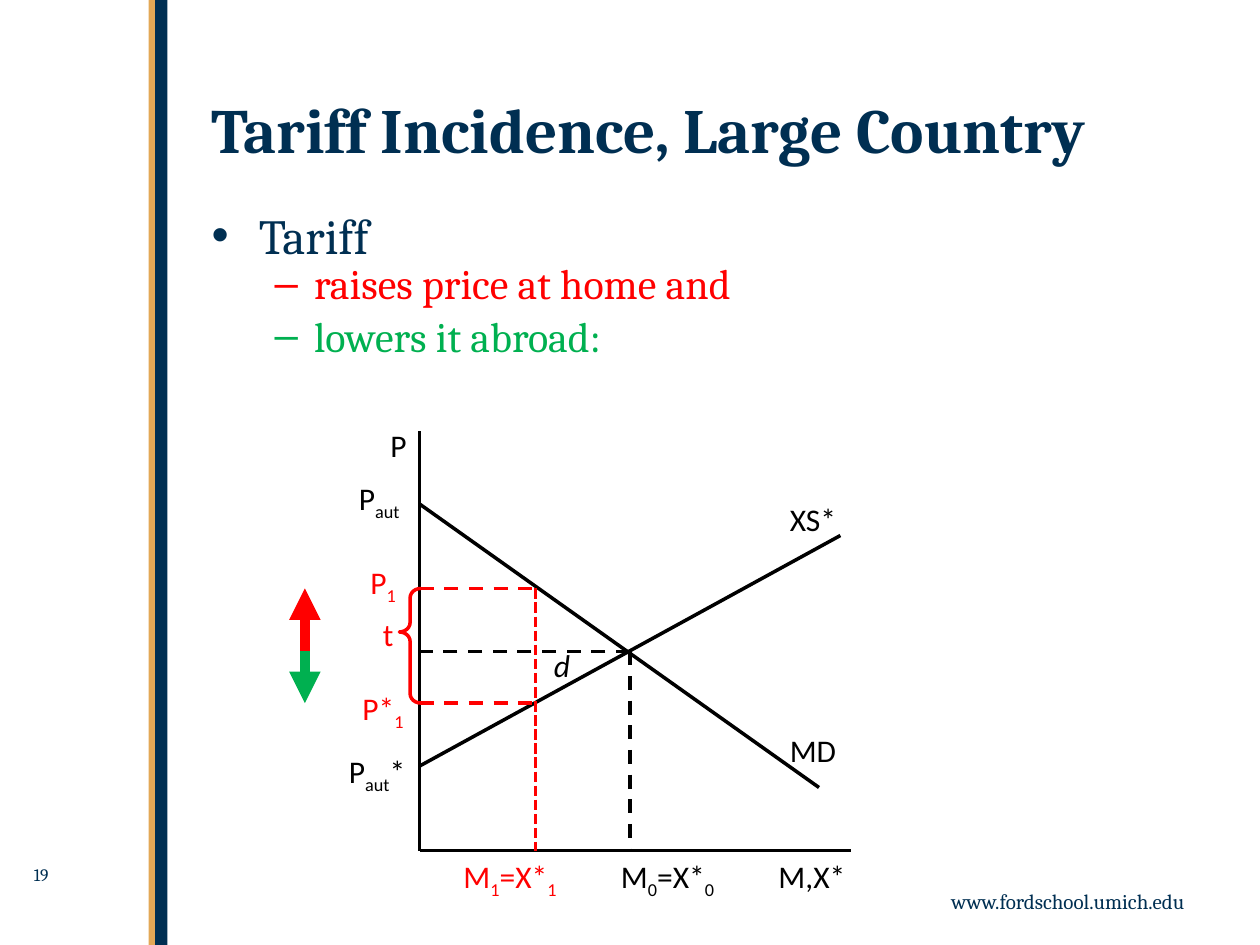
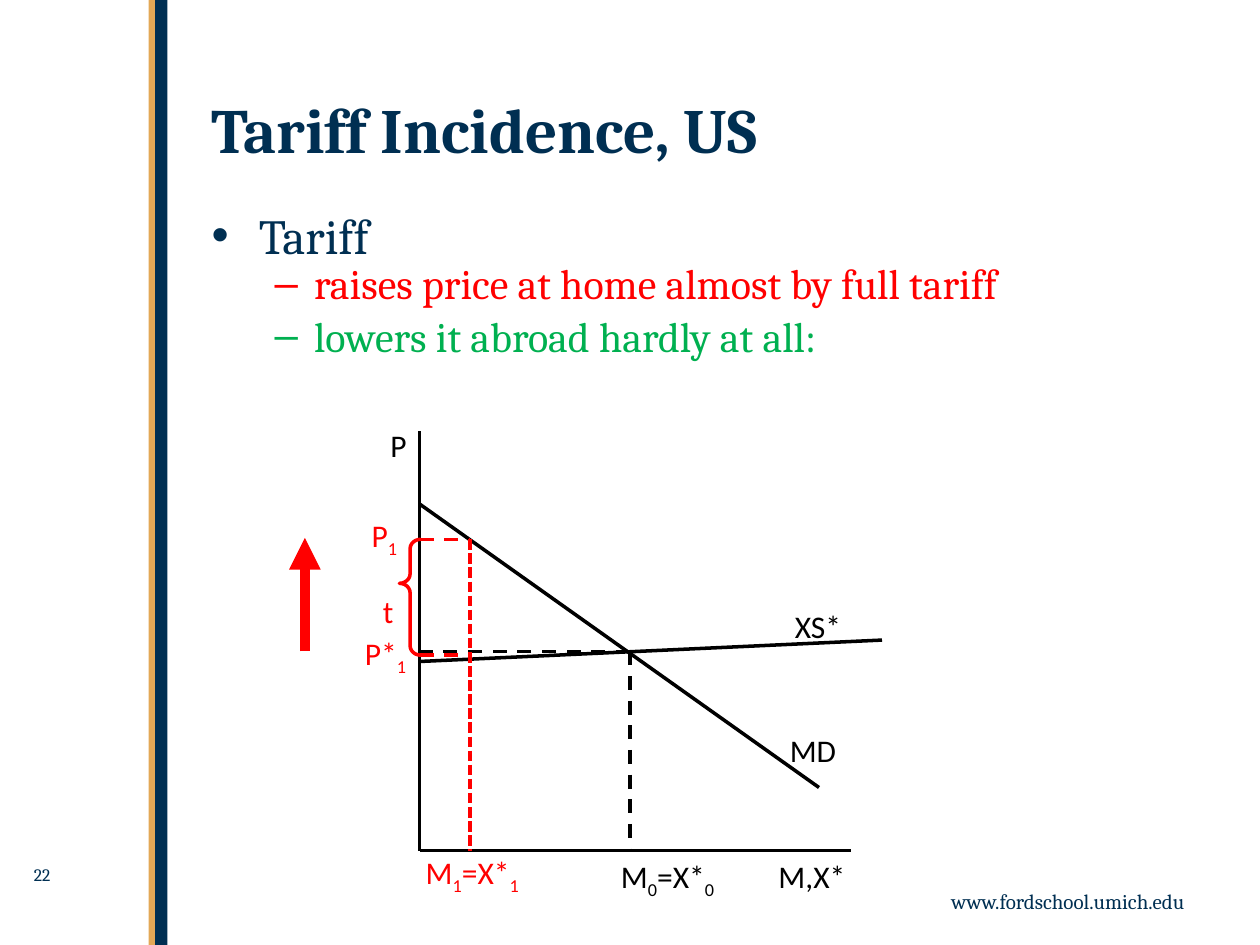
from dataclasses import dataclass

from lxml.etree import SubElement as Sub
from pptx import Presentation
from pptx.dml.color import RGBColor as Rgb
from pptx.enum.dml import MSO_LINE as Dash
from pptx.enum.shapes import MSO_CONNECTOR as Link, MSO_SHAPE as Shape
from pptx.enum.text import MSO_ANCHOR as Anchor, MSO_AUTO_SIZE as Fit, PP_ALIGN as Align
from pptx.oxml.ns import qn
from pptx.util import Inches, Pt


@dataclass(frozen=True)
class Theme:
    """Colours, fonts and type sizes of the deck."""

    navy: Rgb = Rgb.from_string("002F52")
    gold: Rgb = Rgb.from_string("E3A856")
    black: Rgb = Rgb.from_string("000000")
    red: Rgb = Rgb.from_string("FF0000")
    green: Rgb = Rgb.from_string("00B050")
    serif: str = "Cambria"
    sans: str = "Calibri"
    title: int = 36
    lead: int = 28
    point: int = 24
    label: int = 18
    site: int = 12
    page: int = 10
    thin: int = 2
    thick: int = 6


T = Theme()
LEFT, BASE, TOP = 3.33, 6.75, 3.42
FREE = (5, 5.17)
ARROW = 2.42


def apply(item, form):
    """Set each attribute named in a dict of format values."""
    for name, value in form.items():
        setattr(item, name, value)


def place(item, left, top, width, height):
    """Move and size a shape in inches."""
    apply(item, {"left": Inches(left), "top": Inches(top),
                 "width": Inches(width), "height": Inches(height)})


def write(para, text, size, color, face=T.serif, **form):
    """Fill a paragraph, lowering each second part split by underscores."""
    for i, part in enumerate(text.split("_")):
        run = para.add_run()
        run.text = part
        apply(run.font, {"name": face, "size": Pt(size), **form})
        run.font.color.rgb = color
        if i % 2:
            run._r.get_or_add_rPr().set("baseline", "-25000")


def text_box(slide, box, text, size, color, face=T.serif, align=Align.LEFT, **form):
    """Add a wrapped one-line text box."""
    frame = slide.shapes.add_textbox(*map(Inches, box)).text_frame
    frame.word_wrap = True
    para = frame.paragraphs[0]
    para.alignment = align
    write(para, text, size, color, face, **form)


def label(slide, left, top, width, text, color=T.black, align=Align.LEFT, **form):
    """Add a diagram label."""
    text_box(slide, (left, top, width, 0.4), text, T.label, color, T.sans, align, **form)


def line(slide, start, end, color=T.black, width=T.thin, dash=None, arrow=False):
    """Draw a straight line, with an arrowhead if asked."""
    link = slide.shapes.add_connector(Link.STRAIGHT, *map(Inches, (*start, *end)))
    link.line.color.rgb = color
    apply(link.line, {"width": Pt(width), "dash_style": dash})
    props = link._element.spPr
    if arrow:
        Sub(props.find(qn("a:ln")), qn("a:tailEnd"), type="triangle")
    Sub(props, qn("a:effectLst"))


def band(slide, left, width, color):
    """Add a full-height band."""
    bar = slide.shapes.add_shape(Shape.RECTANGLE, *map(Inches, (left, 0, width, 7.5)))
    bar.shadow.inherit = False
    bar.fill.solid()
    bar.fill.fore_color.rgb = color
    bar.line.fill.background()


def brace(slide, top, foot):
    """Mark the tariff between two prices."""
    mark = slide.shapes.add_shape(
        Shape.LEFT_BRACE, *map(Inches, (3.17, top, 0.17, foot - top)))
    mark.shadow.inherit = False
    mark.adjustments[0], mark.adjustments[1] = 0.44, 0.38
    mark.fill.background()
    mark.line.color.rgb = T.red
    mark.line.width = Pt(T.thin)


def frame_up(deck, title, page, rise, fall):
    """Add a slide with its bands, footer, title and list."""
    slide = deck.slides.add_slide(deck.slide_layouts[1])
    band(slide, 1.23, 0.1, T.navy)
    band(slide, 1.18, 0.05, T.gold)
    text_box(slide, (7, 7, 2.5, 0.3), "www.fordschool.umich.edu", T.site, T.navy,
             align=Align.RIGHT)
    text_box(slide, (0.17, 6.81, 0.92, 0.34), page, T.page, T.navy)
    head, body = slide.placeholders
    place(head, 1.58, 0.67, 7.92, 1.23)
    place(body, 1.58, 1.58, 7.92, 1.34)
    for item in (head, body):
        apply(item.text_frame, {"vertical_anchor": Anchor.TOP, "auto_size": Fit.NONE,
                                "word_wrap": True})
    para = head.text_frame.paragraphs[0]
    para.alignment = Align.LEFT
    write(para, title, T.title, T.navy, bold=True)
    rows = (("Tariff", 0, T.lead, T.navy, 1.0),
            (rise, 1, T.point, T.red, Pt(25)),
            (fall, 1, T.point, T.green, Pt(30)))
    for i, (text, level, size, color, pitch) in enumerate(rows):
        para = body.text_frame.add_paragraph() if i else body.text_frame.paragraphs[0]
        apply(para, {"level": level, "space_before": Pt(0), "line_spacing": pitch})
        write(para, text, size, color)
    return slide


def market(slide, supply, name):
    """Draw the axes, both curves and the free-trade point."""
    line(slide, (LEFT, BASE), (6.75, BASE))
    line(slide, (LEFT, BASE), (LEFT, TOP))
    line(slide, *supply)
    line(slide, (6.5, 6.25), (LEFT, 4))
    line(slide, FREE, (FREE[0], BASE), dash=Dash.DASH)
    line(slide, FREE, (LEFT, FREE[1]), dash=Dash.DASH)
    label(slide, 3, 3.33, 0.75, "P")
    label(slide, 6.17, 5.75, 0.75, "MD")
    label(slide, *name, 0.75, "XS*")
    label(slide, 6.08, BASE, 0.75, "M,X*")
    label(slide, 4.83, BASE, 1.17, "M_0_=X*_0")


def tariff(slide, trade, home, abroad, names):
    """Draw the tariff wedge with its prices and quantity."""
    line(slide, (trade, home), (trade, BASE), T.red, dash=Dash.SQUARE_DOT)
    for price in (home, abroad):
        line(slide, (LEFT, price), (trade, price), T.red, dash=Dash.DASH)
    brace(slide, home, abroad)
    for left, top, width, text, align in names:
        label(slide, left, top, width, text, T.red, align)


def shift(slide, price, color):
    """Show a price change by a thick arrow."""
    line(slide, (ARROW, FREE[1]), (ARROW, price), color, T.thick, arrow=True)


def large(deck):
    """Build the large-country slide."""
    slide = frame_up(deck, "Tariff Incidence, Large Country", "19",
                     "raises price at home and", "lowers it abroad:")
    market(slide, ((LEFT, 6.08), (6.67, 4.25)), (6.17, 3.92))
    tariff(slide, 4.25, 4.67, 5.58, (
        (2.75, 4.42, 0.58, "P_1", Align.CENTER),
        (2.75, 5.42, 0.58, "P*_1", Align.CENTER),
        (2.83, 4.83, 0.5, "t", Align.CENTER),
        (3.58, 6.75, 1.08, "M_1_=X*_1", Align.LEFT)))
    label(slide, 2.75, 3.75, 0.67, "P_aut")
    label(slide, 2.67, 5.92, 0.75, "P_aut_*")
    label(slide, 4.25, 5.08, 0.42, "d", align=Align.CENTER, italic=True)
    shift(slide, 4.67, T.red)
    shift(slide, 5.58, T.green)


def states(deck):
    """Build the US slide."""
    slide = frame_up(deck, "Tariff Incidence, US", "22",
                     "raises price at home almost by full tariff",
                     "lowers it abroad hardly at all:")
    market(slide, ((LEFT, 5.25), (7, 5.08)), (6.21, 4.77))
    tariff(slide, 3.73, 4.28, 5.2, (
        (2.76, 4.05, 0.58, "P_1", Align.CENTER),
        (2.77, 4.98, 0.58, "P*_1", Align.CENTER),
        (2.83, 4.65, 0.5, "t", Align.CENTER),
        (3.28, 6.72, 1.08, "M_1_=X*_1", Align.LEFT)))
    shift(slide, 4.27, T.red)


def main():
    """Build and save the deck."""
    deck = Presentation()
    apply(deck, {"slide_width": Inches(10), "slide_height": Inches(7.5)})
    large(deck)
    states(deck)
    deck.save("out.pptx")


if __name__ == "__main__":
    main()
